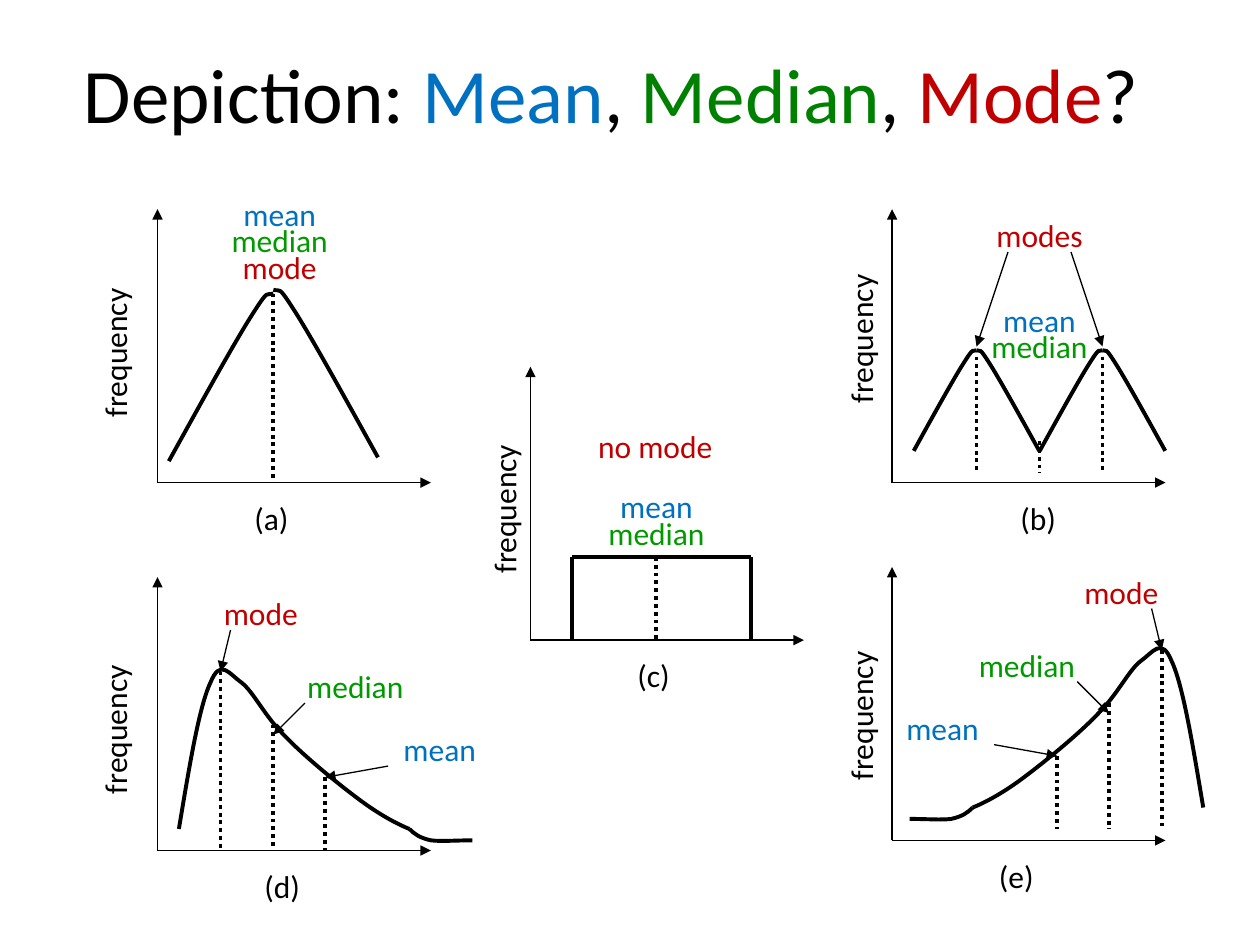
from lxml import etree
from pptx import Presentation
from pptx import util as u
from pptx.dml.color import RGBColor
from pptx.enum import dml, shapes, text
from pptx.oxml.ns import qn

BLACK = RGBColor(0x00, 0x00, 0x00)
BLUE = RGBColor(0x00, 0x70, 0xC0)
GREEN = RGBColor(0x00, 0x99, 0x00)
FOREST = RGBColor(0x00, 0x80, 0x00)
RED = RGBColor(0xC0, 0x00, 0x00)
AXIS = 2.17
THIN, THICK = 0.75, 2.25

MEAN, MEDIAN, MODE = ("mean", BLUE), ("median", GREEN), ("mode", RED)
HILL = [(0.83, 1.33), (0.57, 0.86), (0.31, 0.39), (0.17, 0.17),
        (0.03, -0.05), (0.06, 0.02), (0, 0)]
BODY = [(1.42, 6.58), (1.5, 6.1), (1.58, 5.61), (1.67, 5.42), (1.75, 5.22),
        (1.82, 5.35), (1.92, 5.42), (2.01, 5.49), (2.1, 5.68), (2.25, 5.83),
        (2.4, 5.99), (2.67, 6.21), (2.83, 6.33), (3, 6.46), (3.15, 6.54),
        (3.25, 6.58)]
TAIL = [(3.25, 6.58), (3.29, 6.62), (3.33, 6.65), (3.42, 6.67),
        (3.5, 6.68), (3.62, 6.67), (3.75, 6.67)]


def inch(*nums):
    return [u.Inches(n) for n in nums]


def style(obj, **vals):
    for name, val in vals.items():
        setattr(obj, name, val)


def line(slide, start, end, width=THIN, arrow=False, dots=False):
    item = slide.shapes.add_connector(
        shapes.MSO_CONNECTOR.STRAIGHT, *inch(*start, *end))
    item.line.color.rgb = BLACK
    item.line.width = u.Pt(width)
    if dots:
        item.line.dash_style = dml.MSO_LINE.ROUND_DOT
    props = item._element.spPr
    if arrow:
        etree.SubElement(props.find(qn("a:ln")), qn("a:tailEnd"), type="triangle")
    etree.SubElement(props, qn("a:effectLst"))


def curve(slide, points):
    spots = [inch(*p) for p in points]
    pen = slide.shapes.build_freeform(*spots[0], scale=1.0)
    pen.add_line_segments(spots[1:], close=False)
    item = pen.convert_to_shape()
    item.shadow.inherit = False
    item.fill.background()
    item.line.color.rgb = BLACK
    item.line.width = u.Pt(THICK)
    steps = item._element.findall(".//" + qn("a:lnTo"))
    for i in range(0, len(steps), 3):
        bend = etree.Element(qn("a:cubicBezTo"))
        steps[i].addprevious(bend)
        for step in steps[i:i + 3]:
            bend.append(step[0])
            step.getparent().remove(step)


def write(para, words, color, size=18):
    run = para.add_run()
    run.text = words
    style(run.font, name="Calibri", size=u.Pt(size))
    run.font.color.rgb = color


def label(slide, mid, top, wide, parts, tall=0.33, gap=0.7,
          align=text.PP_ALIGN.CENTER, turn=0):
    box = slide.shapes.add_textbox(*inch(mid - wide / 2, top, wide, tall))
    box.rotation = turn
    frame = box.text_frame
    style(frame, word_wrap=False, auto_size=text.MSO_AUTO_SIZE.SHAPE_TO_FIT_TEXT)
    for i, part in enumerate(parts):
        para = frame.add_paragraph() if i else frame.paragraphs[0]
        style(para, alignment=align, line_spacing=gap)
        write(para, *part)


def plain(slide, mid, top, wide, words, turn=0):
    label(slide, mid, top, wide, [(words, BLACK)], 0.4, None,
          text.PP_ALIGN.LEFT, turn)


def graph(slide, left, base, side, name, mid, gap=0.08):
    line(slide, (left, base), (left, base - AXIS), arrow=True)
    line(slide, (left, base), (left + AXIS, base), arrow=True)
    plain(slide, left + side[0], side[1], 1.24, "frequency", 270)
    plain(slide, mid, base + gap, 0.48, name)


def slope(slide, peak, top, side, scale=1):
    curve(slide, [(peak + side * scale * x, top + scale * y) for x, y in HILL])


def single(slide):
    graph(slide, 1.25, 3.83, (-0.34, 2.59), "(a)", 2.16)
    slope(slide, 2.17, 2.33, -1)
    slope(slide, 2.17, 2.3, 1)
    line(slide, (2.17, 2.33), (2.17, 3.83), THICK, dots=True)
    label(slide, 2.22, 1.58, 1.01, [MEAN, MEDIAN, MODE], 0.73)


def double(slide):
    graph(slide, 7.08, 3.83, (-0.25, 2.48), "(b)", 8.24)
    for peak, start in ((7.75, 8), (8.75, 8.5)):
        for side in (-1, 1):
            slope(slide, peak, 2.78, side, 0.6)
        line(slide, (peak, 2.83), (peak, 3.75), THICK, dots=True)
        line(slide, (start, 2), (peak, 2.75), arrow=True)
    line(slide, (8.25, 3.5), (8.25, 3.75), THICK, dots=True)
    label(slide, 8.25, 2.42, 1.01, [MEAN, MEDIAN], 0.52)
    label(slide, 8.25, 1.75, 0.89, [("modes", RED)])


def flat(slide):
    graph(slide, 4.21, 5.08, (-0.21, 3.83), "(c)", 5.2)
    corners = [(4.54, 5.08), (4.54, 4.42), (5.96, 4.42), (5.96, 5.08)]
    for start, end in zip(corners, corners[1:]):
        line(slide, start, end, THICK)
    line(slide, (5.21, 4.42), (5.21, 5.08), THICK, dots=True)
    label(slide, 5.21, 3.9, 1.01, [MEAN, MEDIAN], 0.52)
    label(slide, 5.2, 3.42, 1.12, [("no mode", RED)], 0.31)


def skew(slide, flip=False):
    def spot(x, y):
        return (10.97 - x, y - 0.17) if flip else (x, y)

    for points in (BODY, TAIL):
        curve(slide, [spot(*p) for p in points])
    marks = [(MODE, 2.07, 4.75, 0.8, (1.83, 5), (1.75, 5.33), 5.33),
             (MEDIAN, 2.82, 5.33, 1.01, (2.42, 5.58), (2.17, 5.83), 5.75),
             (MEAN, 3.49, 5.83, 0.78, (3.08, 6.08), (2.58, 6.17), 6.17)]
    for part, mid, top, wide, start, end, high in marks:
        line(slide, spot(end[0], high), spot(end[0], 6.75), THICK, dots=True)
        line(slide, spot(*start), spot(*end), arrow=True)
        label(slide, *spot(mid, top), wide, [part])


def title(slide):
    box = slide.shapes.title
    left, top, wide, tall = inch(0.42, 0.11, 9, 1.25)
    style(box, left=left, top=top, width=wide, height=tall)
    box.text_frame.vertical_anchor = text.MSO_ANCHOR.MIDDLE
    para = box.text_frame.paragraphs[0]
    para.alignment = text.PP_ALIGN.CENTER
    for words, color in (("Depiction: ", BLACK), ("Mean", BLUE), (", ", BLACK),
                         ("Median", FOREST), (", ", BLACK), ("Mode", RED),
                         ("? ", BLACK)):
        write(para, words, color, 44)


def main():
    deck = Presentation()
    style(deck, slide_width=u.Inches(10), slide_height=u.Inches(7.5))
    slide = deck.slides.add_slide(deck.slide_layouts[5])
    title(slide)
    single(slide)
    double(slide)
    flat(slide)
    graph(slide, 1.25, 6.75, (-0.34, 5.58), "(d)", 2.24)
    skew(slide)
    graph(slide, 7.08, 6.67, (-0.25, 5.47), "(e)", 8.07)
    skew(slide, flip=True)
    deck.save("out.pptx")


if __name__ == "__main__":
    main()
